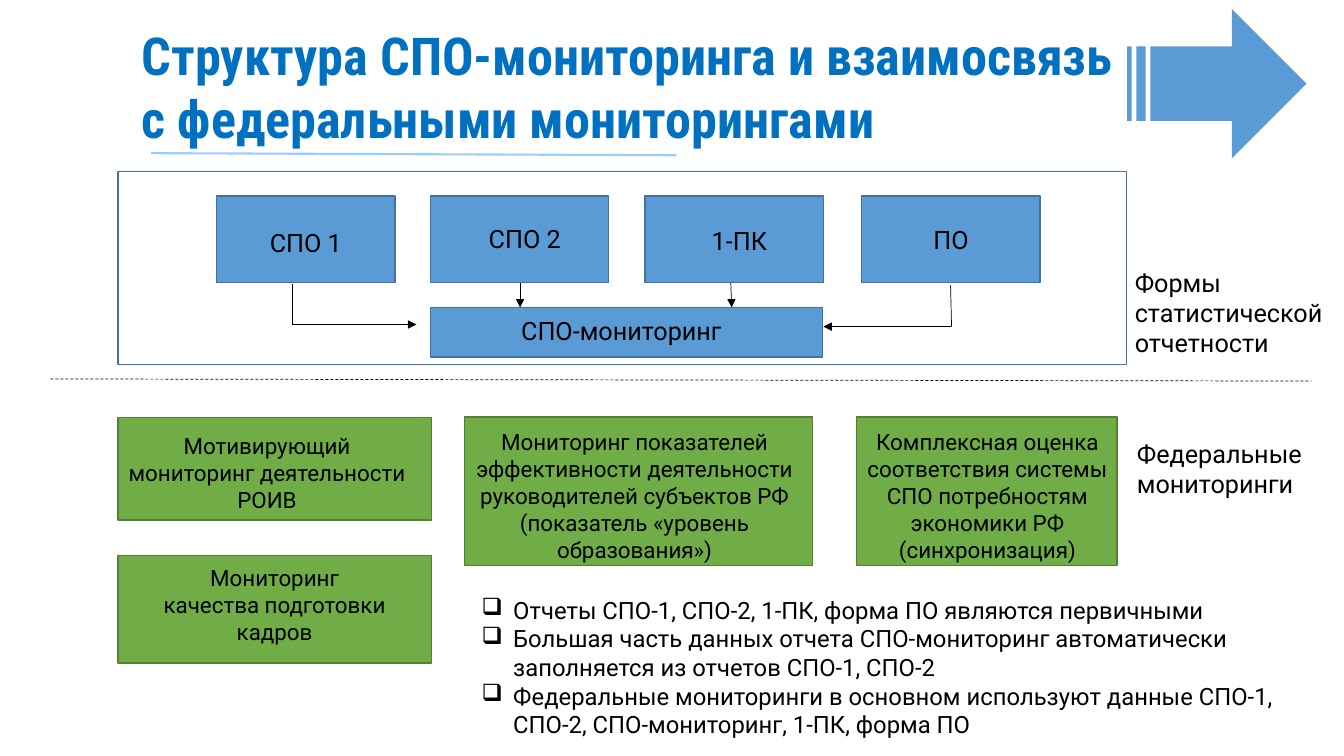
import pptx
import pptx.util
import pptx.dml.color
import pptx.enum.dml
import pptx.enum.shapes
import pptx.enum.text
import pptx.oxml.ns
import lxml.etree

Pt = pptx.util.Pt
SHAPES = pptx.enum.shapes.MSO_SHAPE
ALIGN = pptx.enum.text.PP_ALIGN

# Content; every box is left, top, width, height in points
BLUE, BLUE_EDGE = "5B9BD5", "43739E"
GREEN, GREEN_EDGE = "70AD47", "538035"

title = "Структура СПО-мониторинга и взаимосвязь с федеральными мониторингами"

# Form name, box left, label shift from the box centre, label top
forms = [
    ("СПО 1", 154.8, 0, 159.1),
    ("СПО 2", 307.4, 3.7, 156.2),
    ("1-ПК", 460.8, 3.6, 157.7),
    ("ПО", 615.6, 0, 157),
]
form_top, form_width, form_height, form_label_width = 140, 127.4, 62, 76
hub = (307.4, 219.6, 280, 35.3)
hub_label = ("СПО-мониторинг", (331.2, 221.8, 225.4, 29))

# Text, box, text area
federal = [
    (["Мотивирующий мониторинг деятельности РОИВ"],
     (84.2, 298, 224, 73.4), (84.2, 305.3, 213.1, 65.5)),
    (["Мониторинг\vкачества подготовки кадров"],
     (84.2, 396.7, 224, 77), (84.2, 399.6, 224, 65.5)),
    (["Комплексная оценка соответствия системы СПО потребностям экономики РФ",
      "(синхронизация)"],
     (612, 298, 185.8, 105.8), (610.6, 302.4, 189.4, 104.4)),
    (["Мониторинг показателей эффективности деятельности руководителей субъектов РФ",
      "(показатель «уровень образования»)"],
     (332, 298, 248.4, 105.8), (327.6, 302.4, 251.3, 104.4)),
]

side_notes = [
    ("Формы статистической отчетности", (803.5, 187.2, 161.3, 72.7)),
    ("Федеральные мониторинги", (805, 309.6, 180, 51.1)),
]

conclusions = [
    "Отчеты СПО-1, СПО-2, 1-ПК, форма ПО являются первичными",
    "Большая часть данных отчета СПО-мониторинг автоматически заполняется из отчетов СПО-1, СПО-2",
    "Федеральные мониторинги в основном используют данные СПО-1, СПО-2, СПО-мониторинг, 1-ПК, форма ПО",
]

# Start x, start y, end x, end y, arrowhead at the end
flows = [
    (371.5, 202.3, 371.5, 219.6, True),
    (522, 202.3, 522.7, 219.6, True),
    (679, 203.8, 679.7, 233.3, False),
    (208.8, 203, 208.8, 231.8, False),
    (208.8, 231.8, 297.4, 231.8, True),
    (679, 233.3, 588.2, 233.3, True),
]

deck = pptx.Presentation()
deck.slide_width, deck.slide_height = Pt(960), Pt(540)
slide = deck.slides.add_slide(deck.slide_layouts[6])


def color(hex_code):
    return pptx.dml.color.RGBColor.from_string(hex_code)


def add_box(area, fill=None, edge=None, kind=SHAPES.RECTANGLE):
    box = slide.shapes.add_shape(kind, *map(Pt, area))
    box.shadow.inherit = False
    if fill:
        box.fill.solid()
        box.fill.fore_color.rgb = color(fill)
    else:
        box.fill.background()
    if edge:
        box.line.color.rgb = color(edge)
        box.line.width = Pt(1)
    else:
        box.line.fill.background()


def add_text(paragraphs, area, size=18, font="Roboto", ink="000000",
             bold=False, align=ALIGN.LEFT, bullet=None):
    frame = slide.shapes.add_textbox(*map(Pt, area)).text_frame
    frame.word_wrap = True
    for i, text in enumerate(paragraphs):
        paragraph = frame.add_paragraph() if i else frame.paragraphs[0]
        paragraph.text = text
        paragraph.alignment = align
        for run in paragraph.runs:
            run.font.size, run.font.name, run.font.bold = Pt(size), font, bold
            run.font.color.rgb = color(ink)
        if bullet:
            props = paragraph._p.get_or_add_pPr()
            props.set("marL", str(Pt(22.5)))
            props.set("indent", str(-Pt(22.5)))
            mark = lxml.etree.SubElement(props, pptx.oxml.ns.qn("a:buChar"))
            mark.set("char", bullet)


def add_line(x1, y1, x2, y2, ink="000000", width=0.5, dashed=False, arrow=False):
    line = slide.shapes.add_connector(
        pptx.enum.shapes.MSO_CONNECTOR.STRAIGHT, *map(Pt, (x1, y1, x2, y2)))
    line.line.color.rgb = color(ink)
    line.line.width = Pt(width)
    if dashed:
        line.line.dash_style = pptx.enum.dml.MSO_LINE.DASH
    if arrow:
        head = lxml.etree.SubElement(
            line.line._get_or_add_ln(), pptx.oxml.ns.qn("a:tailEnd"))
        head.set("type", "triangle")
    lxml.etree.SubElement(line._element.spPr, pptx.oxml.ns.qn("a:effectLst"))


# Title with underline and arrow
add_text([title], (94.3, 13, 710.6, 97.9), size=37.3, font="Roboto Condensed",
         ink="0070C0", bold=True)
add_box((805, 6.5, 128.2, 106.6), BLUE, kind=SHAPES.STRIPED_RIGHT_ARROW)
add_line(108, 109.4, 483.1, 110.9, ink="99CCFF", width=1.5)

# Statistical forms and the monitoring they feed
add_box((84.2, 122.4, 720.7, 138.2), edge=BLUE_EDGE)
for name, left, shift, label_top in forms:
    add_box((left, form_top, form_width, form_height), BLUE, BLUE_EDGE)
    label_left = left + (form_width - form_label_width) / 2 + shift
    add_text([name], (label_left, label_top, form_label_width, 29), align=ALIGN.CENTER)
add_box(hub, BLUE, BLUE_EDGE)
add_text([hub_label[0]], hub_label[1], align=ALIGN.CENTER)
for *ends, arrow in flows:
    add_line(*ends, arrow=arrow)

# Divider and federal monitorings
add_line(36, 270.7, 936.7, 272.2, dashed=True)
for paragraphs, box_area, text_area in federal:
    add_box(box_area, GREEN, GREEN_EDGE)
    add_text(paragraphs, text_area, size=16, align=ALIGN.CENTER)

# Side notes and conclusions
for note, area in side_notes:
    add_text([note], area)
add_text(conclusions, (337, 421.9, 622.8, 110.2), size=17, bullet="❑")

deck.save("out.pptx")
